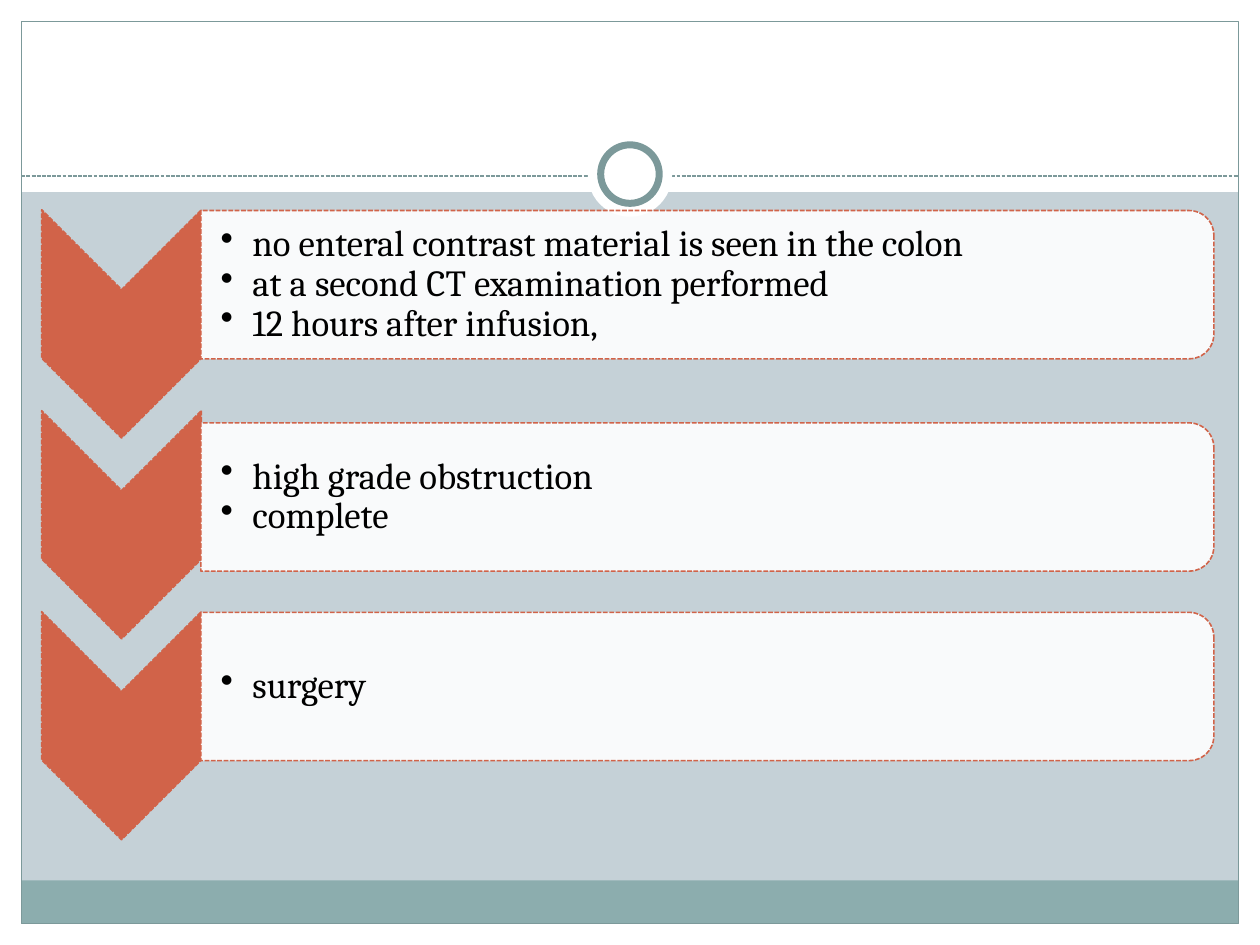
import pptx
import pptx.util
import pptx.dml.color
import pptx.enum.dml
import pptx.enum.shapes
import pptx.enum.text
import pptx.oxml.ns
from lxml import etree

Cm = pptx.util.Cm
Pt = pptx.util.Pt
RGB = pptx.dml.color.RGBColor
KIND = pptx.enum.shapes.MSO_SHAPE
DASH = pptx.enum.dml.MSO_LINE.SQUARE_DOT
qn = pptx.oxml.ns.qn

WHITE = RGB(0xFF, 0xFF, 0xFF)
BLACK = RGB(0, 0, 0)
MIST = RGB(0xC5, 0xD1, 0xD7)
TEAL = RGB(0x8C, 0xAD, 0xAE)
SLATE = RGB(0x7C, 0x99, 0x9A)
RUST = RGB(0xD1, 0x63, 0x49)

WIDE, HIGH = 25.4, 19.05
EDGE = 0.43

# Middle of each panel, and its bullets
STEPS = [
    (5.74, ["no enteral contrast material is seen in the colon",
            "at a second CT examination performed",
            "12 hours after infusion,"]),
    (10.02, ["high grade obstruction", "complete"]),
    (13.84, ["surgery"]),
]


def add_shape(slide, kind, box, fill=None, line=None, width=0.75, dash=None):
    shape = slide.shapes.add_shape(kind, *[Cm(v) for v in box])
    shape.shadow.inherit = False
    if fill is None:
        shape.fill.background()
    else:
        shape.fill.solid()
        shape.fill.fore_color.rgb = fill
    if line is None:
        shape.line.fill.background()
    else:
        shape.line.color.rgb = line
        shape.line.width = Pt(width)
        if dash is not None:
            shape.line.dash_style = dash
    return shape


def add_turned(slide, kind, x, y, wide, high, fill):
    """Add a dashed shape centred on x, y and turned a quarter."""
    box = (x - wide / 2, y - high / 2, wide, high)
    shape = add_shape(slide, kind, box, fill, RUST, 0.9, DASH)
    shape.rotation = 90
    return shape


def add_rule(slide, y):
    rule = slide.shapes.add_connector(
        pptx.enum.shapes.MSO_CONNECTOR.STRAIGHT,
        Cm(EDGE), Cm(y), Cm(WIDE - EDGE), Cm(y))
    rule.line.color.rgb = SLATE
    rule.line.width = Pt(0.75)
    rule.line.dash_style = DASH
    etree.SubElement(rule._element.spPr, qn("a:effectLst"))


def add_list(slide, y, items):
    high = 2.69
    box = slide.shapes.add_textbox(Cm(4.04), Cm(y - high / 2), Cm(20.27), Cm(high))
    frame = box.text_frame
    frame.word_wrap = True
    frame.vertical_anchor = pptx.enum.text.MSO_ANCHOR.MIDDLE
    frame.margin_left = Cm(0.41)
    frame.margin_top = frame.margin_right = frame.margin_bottom = Cm(0.03)
    for i, item in enumerate(items):
        para = frame.add_paragraph() if i else frame.paragraphs[0]
        para.level = 1
        para.line_spacing = 0.9
        props = para._p.get_or_add_pPr()
        props.set("marL", str(Cm(0.64)))
        props.set("indent", str(-Cm(0.64)))
        etree.SubElement(props, qn("a:buChar")).set("char", "•")
        run = para.add_run()
        run.text = item
        run.font.name = "Cambria"
        run.font.size = Pt(21)
        run.font.color.rgb = BLACK


def add_frame(slide):
    # White margins and header
    for box in [(0, HIGH - EDGE, WIDE, EDGE), (0, 0, WIDE, 3.87),
                (0, 0, EDGE, HIGH), (WIDE - EDGE, 0, EDGE, HIGH)]:
        add_shape(slide, KIND.RECTANGLE, box, WHITE)
    # Footer band and border
    inner = WIDE - 2 * EDGE
    add_shape(slide, KIND.RECTANGLE, (EDGE, 17.75, inner, 0.87), TEAL)
    add_shape(slide, KIND.RECTANGLE, (EDGE, EDGE, inner, HIGH - 2 * EDGE),
              line=SLATE)
    # Header rule and ring
    add_rule(slide, 3.55)
    add_shape(slide, KIND.OVAL, (11.85, 2.67, 1.7, 1.7), WHITE)
    add_shape(slide, KIND.OVAL, (12.11, 2.92, 1.18, 1.18), WHITE, SLATE, 4)


def add_step(slide, i, y, items):
    add_turned(slide, KIND.CHEVRON, 2.45, 6.53 + 4.05 * i, 4.6, 3.22, RUST)
    panel = add_turned(slide, KIND.ROUND_2_SAME_RECTANGLE, 14.26, y,
                       2.99, 20.42, WHITE)
    tint = panel._element.spPr.find(qn("a:solidFill"))[0]
    etree.SubElement(tint, qn("a:alpha")).set("val", "90000")
    add_list(slide, y, items)


def main():
    deck = pptx.Presentation()
    deck.slide_width, deck.slide_height = Cm(WIDE), Cm(HIGH)
    slide = deck.slides.add_slide(deck.slide_layouts[6])
    slide.background.fill.solid()
    slide.background.fill.fore_color.rgb = MIST
    add_frame(slide)
    for i, (y, items) in enumerate(STEPS):
        add_step(slide, i, y, items)
    deck.save("out.pptx")


if __name__ == "__main__":
    main()
